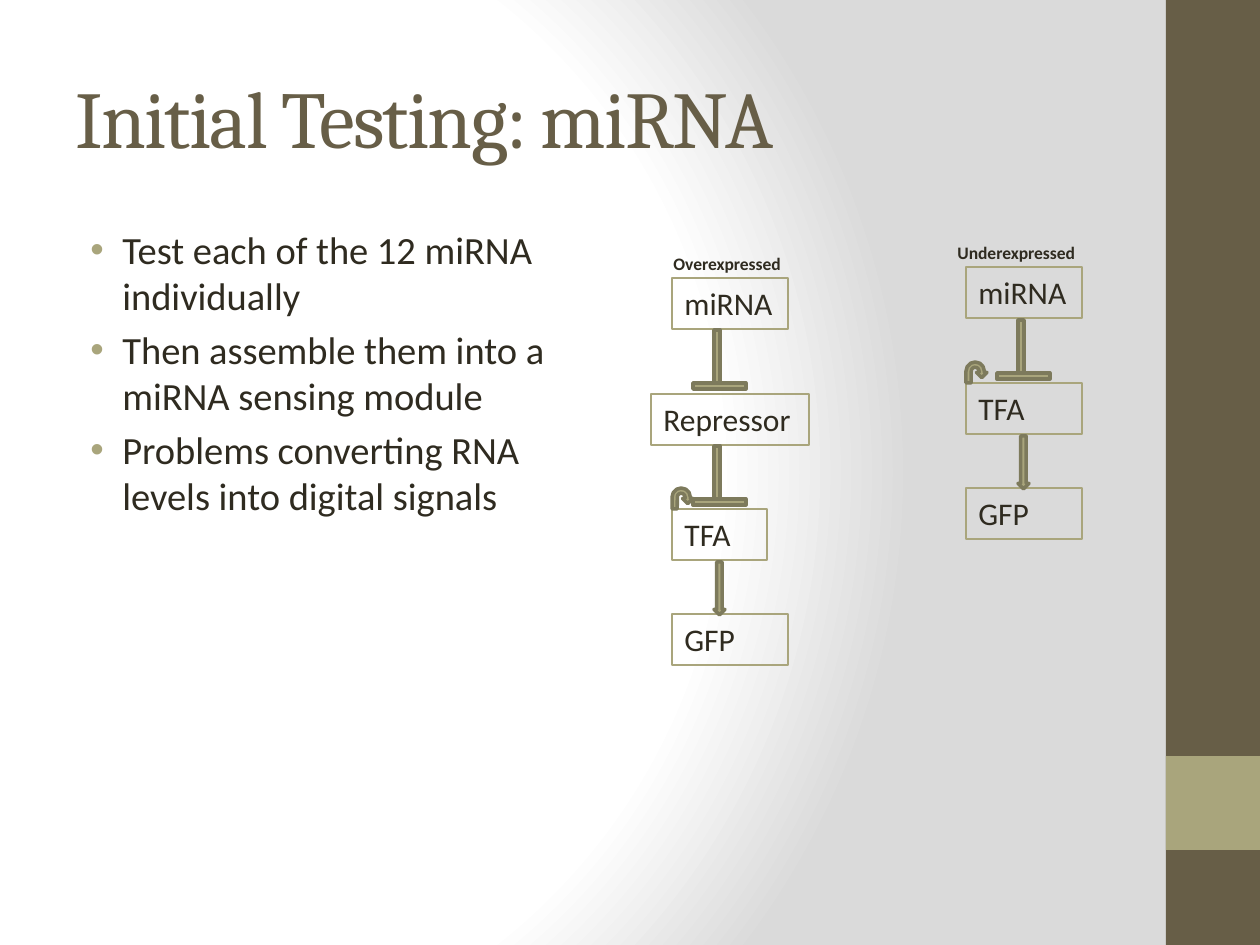
from pptx import Presentation
from pptx.dml.color import RGBColor as RGB
from pptx.enum.shapes import MSO_SHAPE as Kind
from pptx.enum.text import MSO_ANCHOR as Anchor, MSO_AUTO_SIZE as Fit, PP_ALIGN as Align
from pptx.oxml import parse_xml
from pptx.oxml.ns import nsdecls
from pptx.util import Pt

PX = 914400 / 126
theme = {
    "brown": "675E47", "olive": "A9A57C", "edge": "7D7A5C", "ink": "2F2B20",
    "white": "FFFFFF", "gray": "DADADA",
    "title": {"name": "Cambria", "size": Pt(46)},
    "body": {"name": "Calibri", "size": Pt(22)},
    "node": {"name": "Calibri", "size": Pt(18)},
    "label": {"name": "Calibri", "size": Pt(10), "bold": True},
}


def draw(kind, box, fill=None, line=None, width=0.75):
    place = [round(v * PX) for v in box]
    if kind is None:
        return shapes.add_textbox(*place)
    shape = shapes.add_shape(kind, *place)
    shape.shadow.inherit = False
    for part, tone in ((shape.fill, fill), (shape.line.fill, line)):
        if tone:
            part.solid()
            part.fore_color.rgb = RGB.from_string(theme[tone])
        else:
            part.background()
    if line:
        shape.line.width = Pt(width)
    return shape


def write(shape, lines, style, tone="ink", anchor=Anchor.TOP, fit=Fit.NONE):
    frame = shape.text_frame
    for key, val in {"word_wrap": True, "auto_size": fit, "vertical_anchor": anchor}.items():
        setattr(frame, key, val)
    frame.text = "\n".join(lines)
    for para in frame.paragraphs:
        para.alignment = Align.LEFT
        font = para.runs[0].font
        for key, val in theme[style].items():
            setattr(font, key, val)
        font.color.rgb = RGB.from_string(theme[tone])
    return frame.paragraphs


deck = Presentation()
deck.slide_width, deck.slide_height = round(1260 * PX), round(945 * PX)
slide = deck.slides.add_slide(deck.slide_layouts[6])
shapes = slide.shapes

slide.background.fill.gradient()
old = slide.element.xpath(".//p:bgPr/a:gradFill")[0]
stops = "".join(
    f'<a:gs pos="{pos}000"><a:srgbClr val="{theme[tone]}"/></a:gs>'
    for pos, tone in ((0, "white"), (75, "white"), (100, "gray"))
)
old.getparent().replace(old, parse_xml(
    f'<a:gradFill {nsdecls("a")} rotWithShape="1"><a:gsLst>{stops}</a:gsLst>'
    '<a:path path="circle"><a:fillToRect l="20000" t="50000" r="100000" b="50000"/>'
    '</a:path></a:gradFill>'
))

draw(Kind.RECTANGLE, (1166, 0, 94, 945), "brown")
draw(Kind.RECTANGLE, (1166, 756, 94, 94), "olive")

head = write(draw(None, (63, 38, 1050, 157)), ["Initial Testing: miRNA"],
             "title", "brown", Anchor.MIDDLE)
head[0].runs[0].font._element.set("spc", "-100")

points = [
    "Test each of the 12 miRNA individually",
    "Then assemble them into a miRNA sensing module",
    "Problems converting RNA levels into digital signals",
]
for para in write(draw(None, (63, 220, 520, 662)), points, "body"):
    para.space_before = Pt(4.4)
    props = para._p.get_or_add_pPr()
    for key, val in {"marL": 47, "indent": -32}.items():
        props.set(key, str(round(val * PX)))
    for tag in (
        f'<a:buClr {nsdecls("a")}><a:srgbClr val="{theme["olive"]}"/></a:buClr>',
        f'<a:buFont {nsdecls("a")} typeface="Arial"/>',
        f'<a:buChar {nsdecls("a")} char="•"/>',
    ):
        props.append(parse_xml(tag))

nodes = [
    ("miRNA", 672, 278, 116), ("Repressor", 651, 394, 158),
    ("TFA", 672, 509, 95), ("GFP", 672, 614, 116),
    ("miRNA", 966, 267, 116), ("TFA", 966, 383, 116), ("GFP", 966, 488, 116),
]
for text, x, y, wide in nodes:
    node = draw(Kind.RECTANGLE, (x, y, wide, 51), line="olive")
    write(node, [text], "node", fit=Fit.SHAPE_TO_FIT_TEXT)

marks = []
for x, y in ((714, 330), (714, 446), (1018, 320)):
    marks += [(Kind.RECTANGLE, (x, y, 6, 53)), (Kind.RECTANGLE, (x - 21, y + 53, 53, 6))]
for x, y in ((714, 562), (1018, 436)):
    marks.append((Kind.DOWN_ARROW, (x, y, 11, 53)))
for x, y in ((672, 488), (966, 362)):
    marks.append((Kind.U_TURN_ARROW, (x, y, 21, 21)))
for kind, box in marks:
    draw(kind, box, "olive", "edge", 2)

for text, x, y in (("Overexpressed", 661, 247), ("Underexpressed", 945, 236)):
    write(draw(None, (x, y, 147, 34)), [text], "label", fit=Fit.SHAPE_TO_FIT_TEXT)

deck.save("out.pptx")
